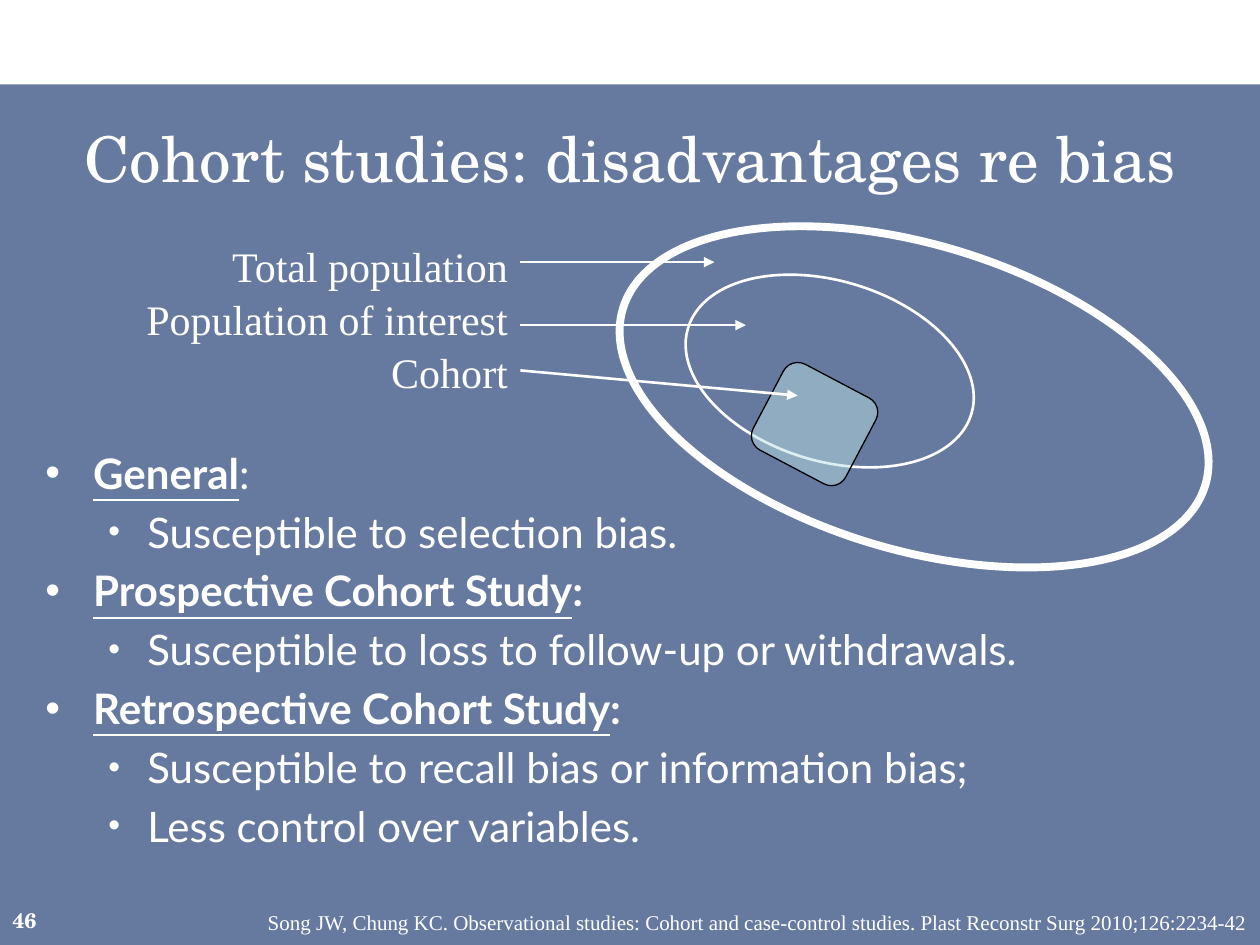
from lxml.etree import SubElement
from pptx import Presentation
from pptx.dml.color import RGBColor
from pptx.enum.shapes import MSO_CONNECTOR, MSO_SHAPE as Shape
from pptx.enum.text import MSO_ANCHOR as Anchor, MSO_AUTO_SIZE as AutoSize, PP_ALIGN as Align
from pptx.oxml.ns import qn
from pptx.util import Inches, Pt

WHITE = RGBColor(0xFF, 0xFF, 0xFF)
BLACK = RGBColor(0, 0, 0)
NAVY = RGBColor(0x00, 0x20, 0x60)
TEAL = RGBColor(0xBB, 0xE0, 0xE3)
SERIF, SANS, TIMES = "TeX Gyre Schola", "Lato", "Times New Roman"

prs = Presentation()
prs.slide_width, prs.slide_height = Inches(10), Inches(7.5)
COL, ROW = prs.slide_width / 100, prs.slide_height / 75
s = prs.slides.add_slide(prs.slide_layouts[1])


def box(x1, y1, x2, y2):
    """Two grid points, (column, row) each, in slide units."""
    return [int(x1 * COL), int(y1 * ROW), int(x2 * COL), int(y2 * ROW)]


def write(p, text, size=24, font=TIMES, bold=False, underline=False, align=None):
    r = p.add_run()
    r.text = text
    f = r.font
    f.size, f.name, f.bold, f.underline = Pt(size), font, bold, underline
    f.color.rgb = WHITE
    if align is not None:
        p.alignment = align


# Tinted panel behind everything
panel = s.shapes.add_shape(Shape.RECTANGLE, *box(0, 6.7, 100, 68.3))
panel.line.fill.background()
s.shapes._spTree.insert(2, panel._element)

# Title
title = s.shapes.title
title.left, title.top, title.width, title.height = box(2.5, 8.3, 95, 8.3)
title.text_frame.auto_size = AutoSize.NONE
title.text_frame.vertical_anchor = Anchor.MIDDLE
write(title.text_frame.paragraphs[0], "Cohort studies: disadvantages re bias",
      size=36, font=SERIF, align=Align.CENTER)

# Bulleted list: level, underlined heading, plain text, is the plain text bold
bullets = [
    (0, "General", ":", False),
    (1, "", "Susceptible to selection bias.", False),
    (0, "Prospective Cohort Study", ":", True),
    (1, "", "Susceptible to loss to follow-up or withdrawals.", False),
    (0, "Retrospective Cohort Study", ":", True),
    (1, "", "Susceptible to recall bias or information bias;", False),
    (1, "", "Less control over variables.", False),
]
INDENTS = [(0.38, 0.38, 100), (0.81, 0.31, 80)]  # margin, hanging, bullet size %
body = s.placeholders[1]
body.left, body.top, body.width, body.height = box(2.6, 35, 95, 34.2)
tf = body.text_frame
tf.auto_size = AutoSize.NONE
for i, (level, heading, text, bold) in enumerate(bullets):
    p = tf.add_paragraph() if i else tf.paragraphs[0]
    p.level = level
    p.space_before = Pt(4.8 if i else 0)
    margin, hanging, percent = INDENTS[level]
    pPr = p._p.get_or_add_pPr()
    pPr.set("marL", str(Inches(margin)))
    pPr.set("indent", str(-Inches(hanging)))
    SubElement(SubElement(pPr, qn("a:buClr")), qn("a:srgbClr"), val=str(WHITE))
    SubElement(pPr, qn("a:buSzPct"), val=str(percent * 1000))
    SubElement(pPr, qn("a:buChar"), char="•")
    if heading:
        write(p, heading, font=SANS, bold=True, underline=True)
    write(p, text, font=SANS, bold=bold)

# Slide number, citation and diagram labels
labels = ["Total population", "Population of interest", "Cohort"]
citation = ("Song JW, Chung KC. Observational studies: Cohort and case-control studies. "
            "Plast Reconstr Surg 2010;126:2234-42")
texts = [
    (box(0, 71, 5, 4), ["46"], 1, dict(size=12, font=SERIF, bold=True)),
    (box(7.8, 71.7, 92.2, 3), [citation], 1, dict(size=12, align=Align.RIGHT)),
    (box(10.3, 18.4, 31, 13.1), labels, 1.05, dict(align=Align.RIGHT)),
]
for place, lines, spacing, style in texts:
    tf = s.shapes.add_textbox(*place).text_frame
    tf.word_wrap = lines is not labels
    tf.vertical_anchor = Anchor.MIDDLE if lines == ["46"] else Anchor.TOP
    for i, line in enumerate(lines):
        p = tf.add_paragraph() if i else tf.paragraphs[0]
        p.line_spacing = spacing
        write(p, line, **style)

# Nested populations: total, of interest, cohort
ellipses = [(box(48.4, 19.4, 48.3, 24.2), 4.5), (box(54.1, 22.3, 23.5, 14.3), 1.5)]
for place, width in ellipses:
    ellipse = s.shapes.add_shape(Shape.OVAL, *place)
    ellipse.rotation = 16.9
    ellipse.shadow.inherit = False
    ellipse.fill.background()
    ellipse.line.color.rgb, ellipse.line.width = WHITE, Pt(width)
cohort = s.shapes.add_shape(Shape.ROUNDED_RECTANGLE, *box(60.8, 29.5, 7.7, 8.3))
cohort.rotation = 297.8
cohort.line.color.rgb, cohort.line.width = BLACK, Pt(0.75)

# Translucent fills
for shape, color, opacity in [(panel, NAVY, 60), (cohort, TEAL, 50)]:
    shape.shadow.inherit = False
    shape.fill.solid()
    shape.fill.fore_color.rgb = color
    tint = shape._element.spPr.find(qn("a:solidFill"))[0]
    SubElement(tint, qn("a:alpha"), val=str(opacity * 1000))

# Arrows from the labels
for y1, x2, y2 in [(20.8, 56.7, 20.8), (25.8, 59.2, 25.8), (29.4, 63.3, 31.4)]:
    arrow = s.shapes.add_connector(MSO_CONNECTOR.STRAIGHT, *box(41.3, y1, x2, y2))
    arrow.line.color.rgb, arrow.line.width = WHITE, Pt(1.5)
    SubElement(arrow.line._get_or_add_ln(), qn("a:tailEnd"), type="triangle")
    SubElement(arrow._element.spPr, qn("a:effectLst"))

prs.save("out.pptx")
